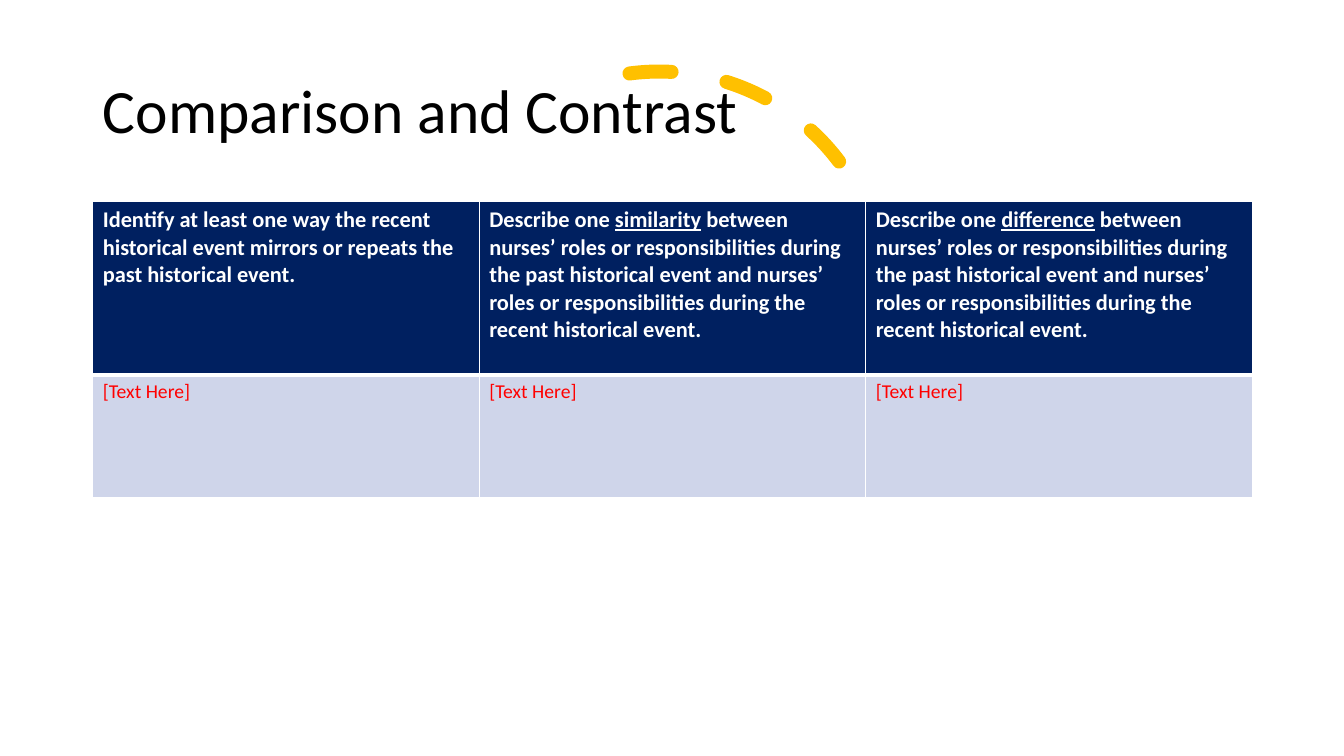
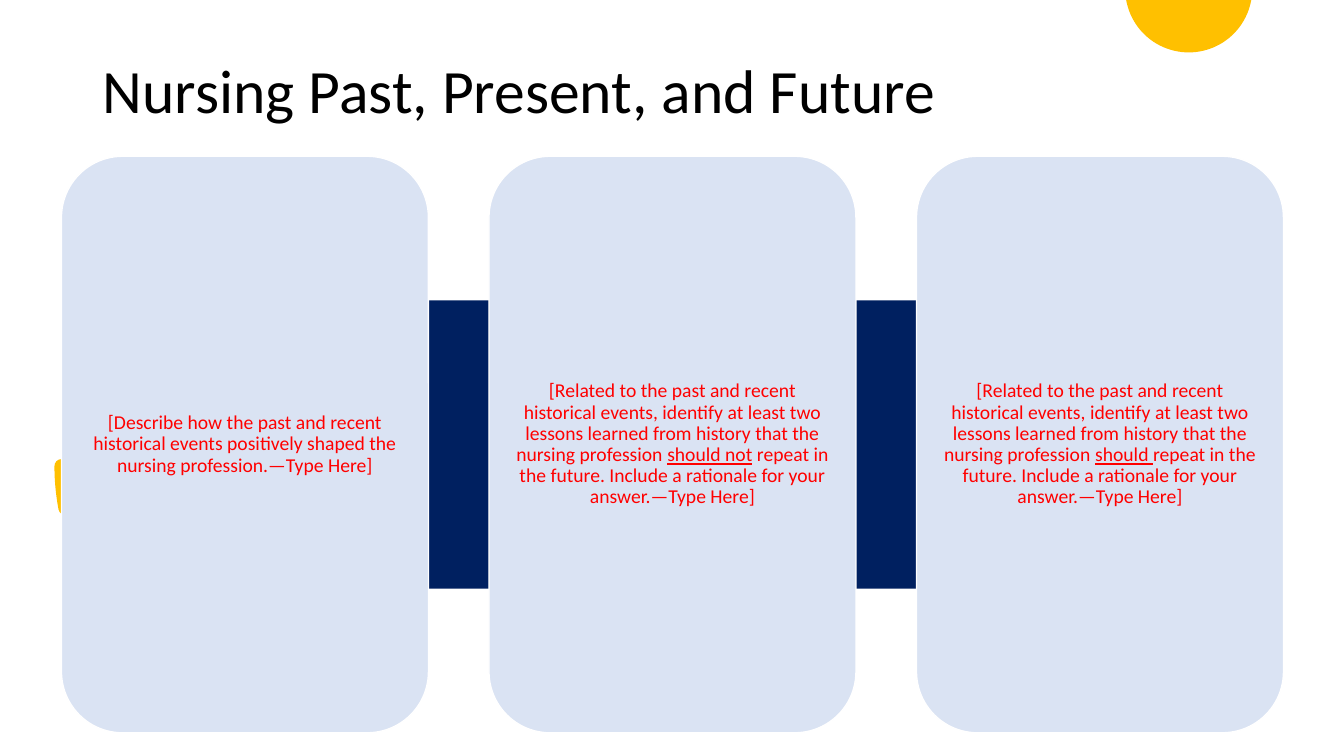
import math

from lxml import etree
from pptx import Presentation
from pptx.dml.color import RGBColor
from pptx.enum.dml import MSO_LINE
from pptx.enum.shapes import MSO_SHAPE
from pptx.enum.text import MSO_ANCHOR, MSO_AUTO_SIZE, PP_ALIGN
from pptx.oxml.ns import qn
from pptx.util import Inches, Pt

ARC = MSO_SHAPE.ARC
RIGHT_ARROW = MSO_SHAPE.RIGHT_ARROW
ROUNDED = MSO_SHAPE.ROUNDED_RECTANGLE
DASH = MSO_LINE.DASH
MIDDLE = MSO_ANCHOR.MIDDLE
NO_AUTOFIT = MSO_AUTO_SIZE.NONE
LEFT, CENTER = PP_ALIGN.LEFT, PP_ALIGN.CENTER

FONT = "Calibri"
BLACK = RGBColor(0x00, 0x00, 0x00)
WHITE = RGBColor(0xFF, 0xFF, 0xFF)
NAVY = RGBColor(0x00, 0x20, 0x60)
GOLD = RGBColor(0xFF, 0xC0, 0x00)
RED = RGBColor(0xFF, 0x00, 0x00)
CELL_BLUE = RGBColor(0xCF, 0xD5, 0xEA)
CARD_BLUE = RGBColor(0xDA, 0xE3, 0xF3)

TITLE_LEFT, CONTENT_WIDTH = 0.92, 11.5
ARC_SIZE = 4.47

ROLES = (" between nurses’ roles or responsibilities during the past historical event "
         "and nurses’ roles or responsibilities during the recent historical event.")
HEADINGS = [
    ("Identify at least one way the recent historical event mirrors or repeats "
     "the past historical event.",),
    ("Describe one ", "similarity", ROLES),
    ("Describe one ", "difference", ROLES),
]
ANSWER = ("[Text Here]",)

LESSONS = ("[Related to the past and recent historical events, identify at least two lessons "
           "learned from history that the nursing profession ")
RATIONALE = "repeat in the future. Include a rationale for your answer.—Type Here]"
PROMPTS = [
    ("[Describe how the past and recent historical events positively shaped "
     "the nursing profession.—Type Here]",),
    (LESSONS, "should not", " " + RATIONALE),
    (LESSONS, "should ", RATIONALE),
]


def write(paragraph, parts, size, color, bold=False):
    for index, part in enumerate(parts):
        run = paragraph.add_run()
        run.text = part
        font = run.font
        font.name, font.size, font.bold = FONT, Pt(size), bold
        font.color.rgb = color
        if index == 1:
            font.underline = True


def place_title(slide, text, top, height):
    title = slide.shapes.title
    title.left, title.top = Inches(TITLE_LEFT), Inches(top)
    title.width, title.height = Inches(CONTENT_WIDTH), Inches(height)
    frame = title.text_frame
    frame.auto_size = NO_AUTOFIT
    frame.vertical_anchor = MIDDLE
    paragraph = frame.paragraphs[0]
    paragraph.alignment = LEFT
    paragraph.line_spacing = 0.9
    write(paragraph, [text], 44, BLACK)
    title.element.getparent().append(title.element)


def add_dashed_arc(slide, left, top, rotation, end=0):
    arc = slide.shapes.add_shape(
        ARC, Inches(left), Inches(top), Inches(ARC_SIZE), Inches(ARC_SIZE))
    arc.shadow.inherit = False
    arc.adjustments[0], arc.adjustments[1] = 162, end
    arc.rotation = rotation
    arc.fill.background()
    arc.line.color.rgb = GOLD
    arc.line.width = Pt(10)
    arc.line.dash_style = DASH
    properties = arc.element.spPr
    properties.find(qn("a:xfrm")).set("flipV", "1")
    properties.find(qn("a:ln")).set("cap", "rnd")


def add_block(slide, preset, left, top, width, height, fill):
    block = slide.shapes.add_shape(
        preset, Inches(left), Inches(top), Inches(width), Inches(height))
    block.shadow.inherit = False
    block.fill.solid()
    block.fill.fore_color.rgb = fill
    block.line.fill.background()
    return block


def add_card(slide, left, top, width, height, parts):
    card = add_block(slide, ROUNDED, left, top, width, height, CARD_BLUE)
    card.line.color.rgb = WHITE
    card.line.width = Pt(1)
    frame = card.text_frame
    frame.word_wrap = True
    frame.vertical_anchor = MIDDLE
    frame.margin_left = frame.margin_right = Inches(0.06)
    frame.margin_top = frame.margin_bottom = Inches(0.06)
    paragraph = frame.paragraphs[0]
    paragraph.alignment = CENTER
    paragraph.line_spacing = 0.9
    write(paragraph, parts, 14, RED)


def add_cut_off_sun(slide, center_x, center_y, radius, steps=48):
    start = math.asin(-center_y / radius)
    sweep = math.pi - 2 * start
    angles = [start + sweep * step / steps for step in range(steps + 1)]
    rim = [(Inches(center_x + radius * math.cos(angle)),
            Inches(center_y + radius * math.sin(angle))) for angle in angles]
    builder = slide.shapes.build_freeform(*rim[0])
    builder.add_line_segments(rim[1:], close=True)
    sun = builder.convert_to_shape()
    sun.shadow.inherit = False
    sun.fill.solid()
    sun.fill.fore_color.rgb = GOLD
    sun.line.fill.background()


def set_borders(cell, **widths):
    properties = cell._tc.get_or_add_tcPr()
    for index, (side, width) in enumerate(widths.items()):
        border = etree.Element(qn("a:ln" + side), w=str(Pt(width)))
        fill = etree.SubElement(border, qn("a:solidFill"))
        etree.SubElement(fill, qn("a:srgbClr"), val=str(WHITE))
        properties.insert(index, border)


def fill_cell(cell, parts, fill, size, color, bold, top_border, bottom_border):
    write(cell.text_frame.paragraphs[0], parts, size, color, bold)
    cell.fill.solid()
    cell.fill.fore_color.rgb = fill
    set_borders(cell, L=1, R=1, T=top_border, B=bottom_border)


def add_comparison_table(slide):
    heights = [1.72, 1.22]
    table = slide.shapes.add_table(
        len(heights), len(HEADINGS), Inches(TITLE_LEFT), Inches(2),
        Inches(CONTENT_WIDTH), Inches(sum(heights))).table
    for row, height in zip(table.rows, heights):
        row.height = Inches(height)
    for column, heading in enumerate(HEADINGS):
        fill_cell(table.cell(0, column), heading, NAVY, 16, WHITE, True, 1, 3)
        fill_cell(table.cell(1, column), ANSWER, CELL_BLUE, 14, RED, False, 3, 1)


def build_comparison(slide):
    add_dashed_arc(slide, 4.3, 0.71, 233.1, 200.93)
    place_title(slide, "Comparison and Contrast", 0.4, 1.45)
    add_comparison_table(slide)


def build_outlook(slide):
    add_cut_off_sun(slide, 11.79, -0.11, 0.63)
    place_title(slide, "Nursing Past, Present, and Future", 0, 1.85)
    left, top, height = 0.61, 1.55, 5.72
    add_dashed_arc(slide, left, 2.39, 90)
    add_block(slide, RIGHT_ARROW, left, top, 12.12, height, NAVY)
    for index, prompt in enumerate(PROMPTS):
        add_card(slide, left + index * 4.24, top, 3.64, height, prompt)


def main():
    deck = Presentation()
    deck.slide_width, deck.slide_height = Inches(13.33), Inches(7.5)
    title_only = deck.slide_layouts[5]
    for build in (build_comparison, build_outlook):
        build(deck.slides.add_slide(title_only))
    deck.save("out.pptx")


if __name__ == "__main__":
    main()
